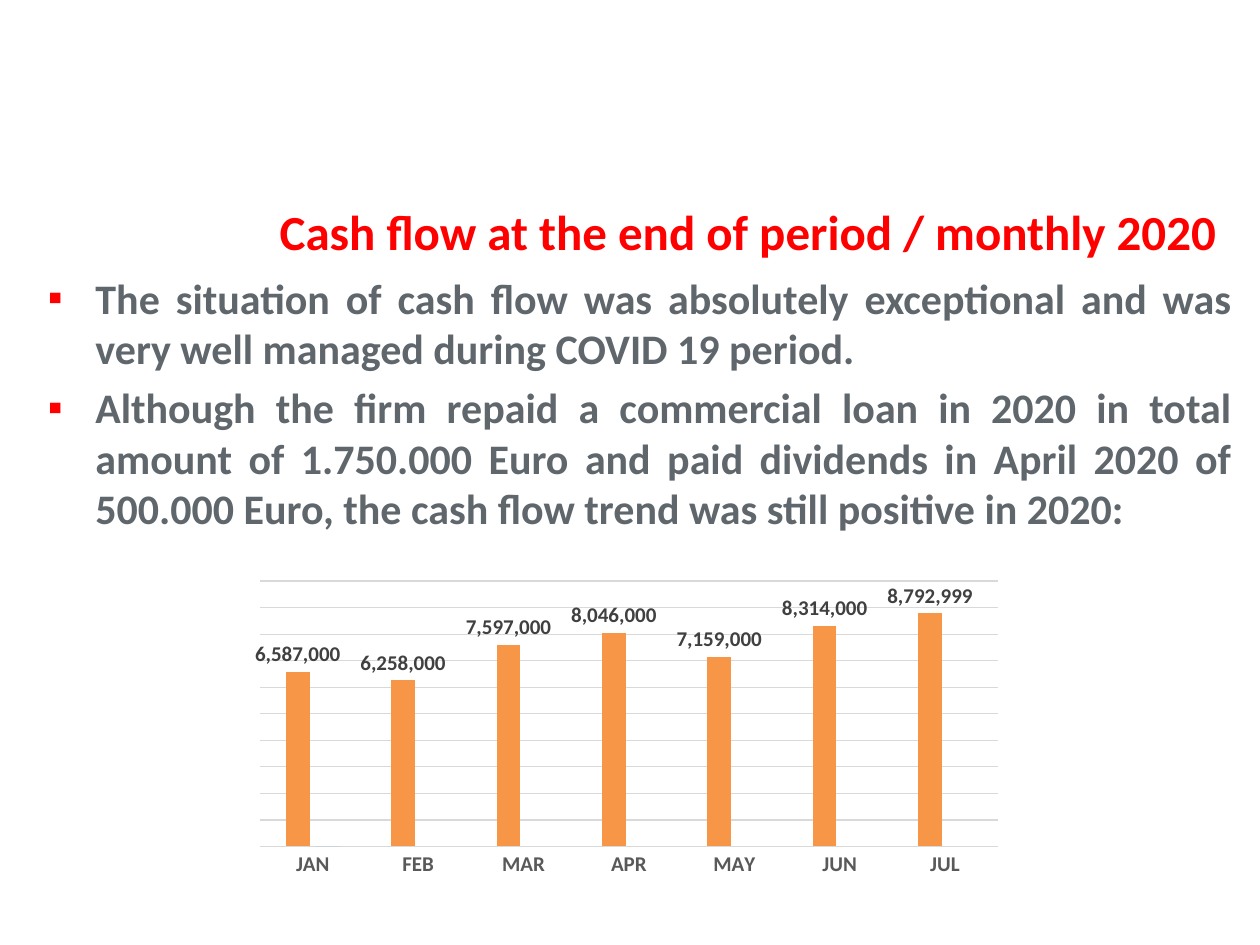
from lxml.etree import SubElement
from pptx import Presentation
from pptx.chart.data import CategoryChartData
from pptx.dml.color import RGBColor
from pptx.enum.chart import XL_CHART_TYPE, XL_LABEL_POSITION, XL_TICK_LABEL_POSITION, XL_TICK_MARK
from pptx.enum.text import MSO_ANCHOR, PP_ALIGN
from pptx.oxml.ns import qn
from pptx.util import Cm, Pt

HUES = {"red": "FF0000", "text": "5F666C", "axis": "595959", "label": "404040",
        "grid": "D9D9D9", "bar": "F79646", "next": "4BACC6", "black": "000000"}
FACE = "Calibri"
POINTS = [
    "The situation of cash flow was absolutely exceptional and was very well "
    "managed during COVID 19 period.",
    "Although the firm repaid a commercial loan in 2020 in total amount of "
    "1.750.000 Euro and paid dividends in April 2020 of 500.000 Euro, the cash "
    "flow trend was still positive in 2020:",
]
CASH = {"JAN": 6587000, "FEB": 6258000, "MAR": 7597000, "APR": 8046000,
        "MAY": 7159000, "JUN": 8314000, "JUL": 8792999}


def hue(name):
    return RGBColor.from_string(HUES[name])


def style(font, size, name, bold=True):
    font.name, font.size, font.bold = FACE, Pt(size), bold
    font.color.rgb = hue(name)


def rule(line):
    line.color.rgb = hue("grid")
    line.width = Pt(0.75)


def place(shape, box):
    shape.left, shape.top, shape.width, shape.height = [Cm(n) for n in box]


def add_title(slide, box):
    shape = slide.shapes.title
    place(shape, box)
    frame = shape.text_frame
    frame.text = "Cash flow at the end of period / monthly 2020"
    frame.vertical_anchor = MSO_ANCHOR.MIDDLE
    para = frame.paragraphs[0]
    para.alignment = PP_ALIGN.RIGHT
    style(para.font, 28, "red")


def add_list(slide, box):
    shape = slide.placeholders[1]
    place(shape, box)
    frame = shape.text_frame
    frame.text = "\n".join(POINTS)
    for i, para in enumerate(frame.paragraphs):
        para.alignment = PP_ALIGN.JUSTIFY
        para.space_before = Pt(5 if i else 0)
        # Red square bullet with a hanging indent
        props = para._p.get_or_add_pPr()
        props.set("marL", str(Cm(0.96)))
        props.set("indent", str(-Cm(0.96)))
        tint = SubElement(props, qn("a:buClr"))
        SubElement(tint, qn("a:srgbClr"), val=HUES["red"])
        SubElement(props, qn("a:buChar"), char="▪")
        style(para.font, 24, "text")


def set_plot(chart, **sides):
    """Fix the inner plot area, in shares of the chart box."""
    area = chart._chartSpace.chart.plotArea
    for old in area.findall(qn("c:layout")):
        area.remove(old)
    outer = SubElement(area, qn("c:layout"))
    area.insert(0, outer)
    inner = SubElement(outer, qn("c:manualLayout"))
    parts = {"layoutTarget": "inner", "xMode": "edge", "yMode": "edge", **sides}
    for tag, val in parts.items():
        SubElement(inner, qn(f"c:{tag}"), val=str(val))


def add_bars(slide, box):
    data = CategoryChartData(number_format="#,##0")
    data.categories = list(CASH)
    data.add_series("Series 1", list(CASH.values()))
    data.add_series("Series 2", [0] + [None] * (len(CASH) - 1))
    chart = slide.shapes.add_chart(
        XL_CHART_TYPE.COLUMN_CLUSTERED, *[Cm(n) for n in box], data).chart
    chart.has_legend = chart.has_title = False
    style(chart.font, 10, "black", False)
    set_plot(chart, x=0.114, y=0.255, w=0.791, h=0.569)

    # Columns and their labels
    plot = chart.plots[0]
    plot.gap_width, plot.overlap = 219, -27
    plot.vary_by_categories = False
    for series, name in zip(plot.series, ("bar", "next")):
        series.format.fill.solid()
        series.format.fill.fore_color.rgb = hue(name)
    labels = plot.series[0].data_labels
    labels.show_value = True
    labels.position = XL_LABEL_POSITION.OUTSIDE_END
    labels.number_format, labels.number_format_is_linked = "#,##0", False
    style(labels.font, 12, "label")

    # Axes: months below, values shown by grid lines only
    months, sums = chart.category_axis, chart.value_axis
    months.major_tick_mark = XL_TICK_MARK.NONE
    style(months.tick_labels.font, 12, "axis")
    rule(months.format.line)
    sums.minimum_scale, sums.maximum_scale, sums.major_unit = 0, 10000000, 1000000
    sums.major_tick_mark = XL_TICK_MARK.NONE
    sums.tick_label_position = XL_TICK_LABEL_POSITION.NONE
    sums.format.line.fill.background()
    sums.has_major_gridlines = True
    rule(sums.major_gridlines.format.line)


def main():
    deck = Presentation()
    deck.slide_width, deck.slide_height = Cm(25.4), Cm(19.05)
    slide = deck.slides.add_slide(deck.slide_layouts[1])
    add_title(slide, (1.9, 3.94, 22.86, 1.42))
    add_list(slide, (0.71, 5.36, 24.38, 5.77))
    add_bars(slide, (3.1, 9.32, 18.8, 9.4))
    deck.save("out.pptx")


if __name__ == "__main__":
    main()
